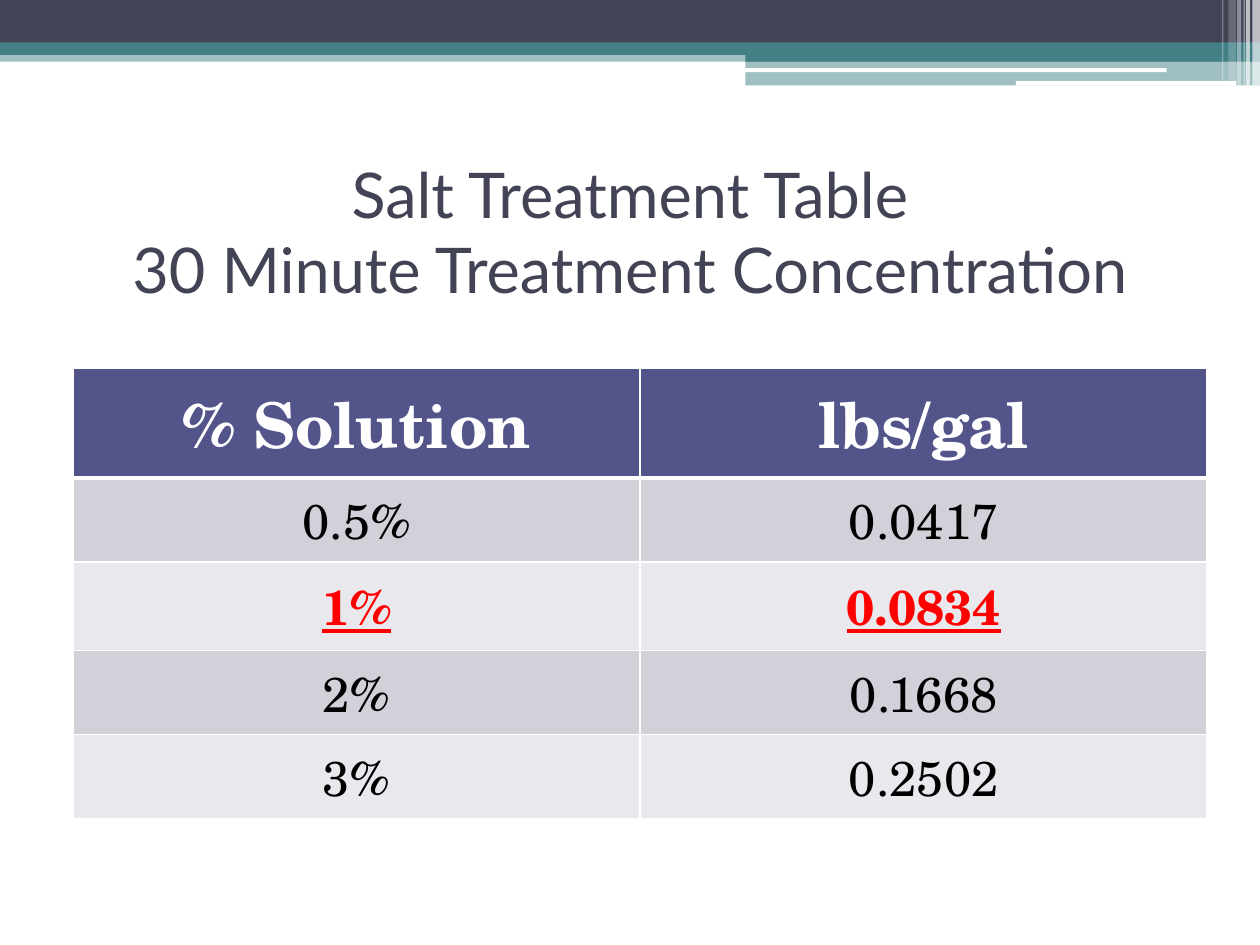
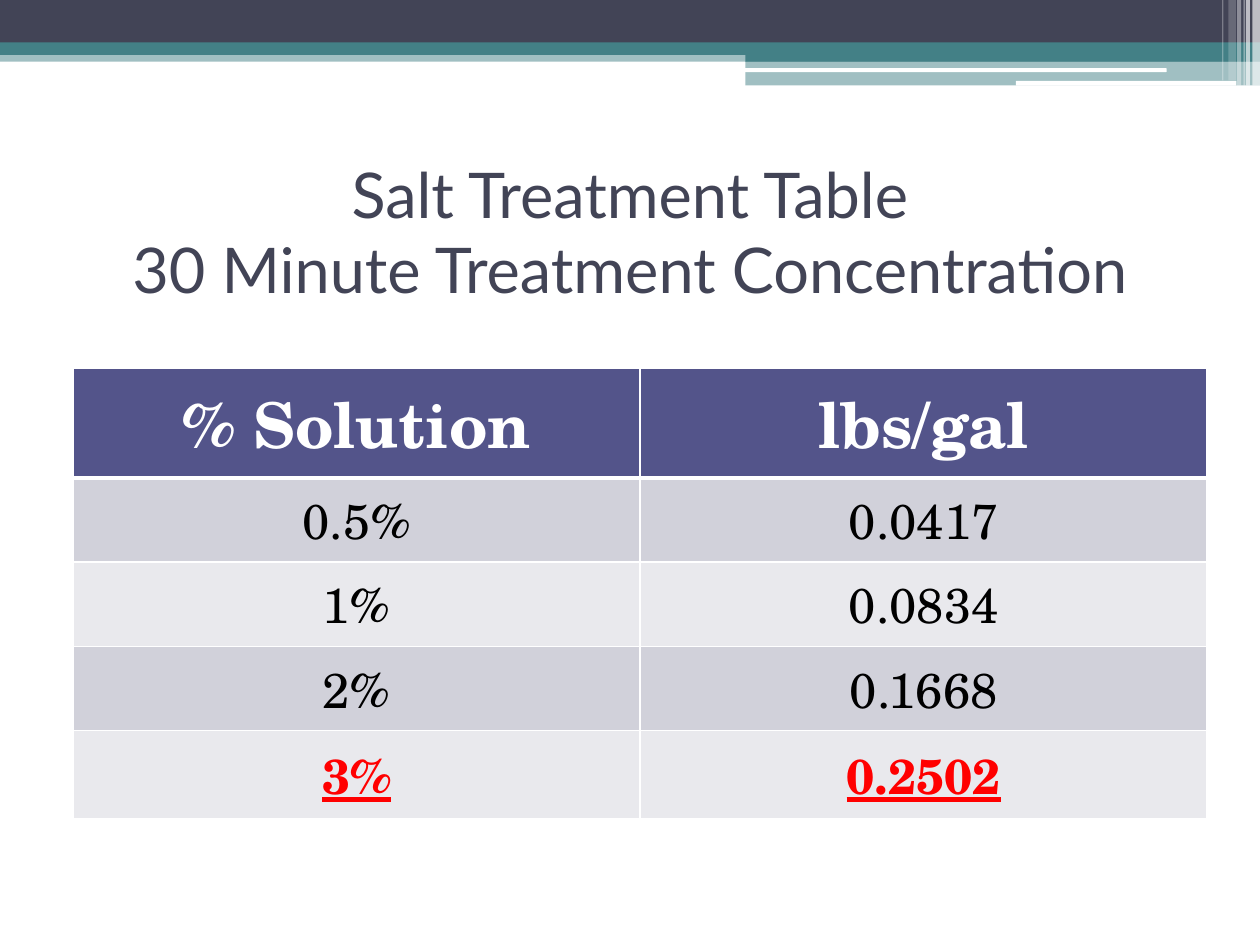
import pptx
import pptx.util
import pptx.dml.color
import pptx.enum.shapes
import pptx.enum.text
import pptx.oxml
import pptx.oxml.ns
import lxml.etree

Pt = pptx.util.Pt
SHAPES = pptx.enum.shapes.MSO_SHAPE
CENTER = pptx.enum.text.PP_ALIGN.CENTER
MIDDLE = pptx.enum.text.MSO_ANCHOR.MIDDLE

SLATE, TEAL, WHITE = "424456", "438086", "FFFFFF"
INDIGO, BAND_DARK, BAND_LIGHT = "53548A", "D1D1DA", "E9E9ED"
BLACK, RED = "000000", "FF0000"

TITLE_FORMAT = {"name": "Lato", "size": Pt(36), "bold": False}
HEADER_FORMAT = {"name": "TeX Gyre Schola", "size": Pt(36), "bold": True}
DOSE_FORMAT = {"name": "TeX Gyre Schola", "size": Pt(28), "bold": False}
MARKED_FORMAT = DOSE_FORMAT | {"bold": True, "underline": True}

TITLE = "Salt Treatment Table\v30 Minute Treatment Concentration"
DOSES = [
    ("% Solution", "lbs/gal"),
    ("0.5%", "0.0417"),
    ("1%", "0.0834"),
    ("2%", "0.1668"),
    ("3%", "0.2502"),
]
MARKED_DOSES = ["1%", "3%"]

BANNER_BOX = (0, 0, 720, 49)
TITLE_BOX = (36, 90, 648, 84)
TABLE_BOX = (41.8, 210.2, 648, 214)

BANDS = [
    (0, 28.8, 720, 6.5, TEAL, 50),
    (0, 0, 720, 24.5, SLATE, 100),
    (0, 24.2, 720, 7.2, TEAL, 100),
    (426, 28.1, 294, 7.2, TEAL, 100),
    (426, 35, 294, 13.9, TEAL, 50),
]
HIGHLIGHTS = [(425.5, 39, 241.2, 2.2), (580.5, 46.2, 126, 2.7)]
STRIPES = [
    (715.7, 4.3, 49, 65),
    (712, 2.2, 49, 65),
    (710.6, 0.72, 49, 60),
    (707, 2.2, 49, 40),
    (702, 4.3, 46, 20),
    (698.4, 0.72, 46, 30),
]


def color(value):
    return pptx.dml.color.RGBColor.from_string(value)


def format_font(font, values, ink):
    for attribute, value in values.items():
        setattr(font, attribute, value)
    font.color.rgb = color(ink)


def add_bar(slide, kind, left, top, width, height, fill, opacity=100):
    bar = slide.shapes.add_shape(kind, Pt(left), Pt(top), Pt(width), Pt(height))
    bar.shadow.inherit = False
    bar.fill.solid()
    bar.fill.fore_color.rgb = color(fill)
    bar.line.fill.background()
    if opacity < 100:
        tint = bar.fill._xPr.find(".//" + pptx.oxml.ns.qn("a:srgbClr"))
        alpha = lxml.etree.SubElement(tint, pptx.oxml.ns.qn("a:alpha"))
        alpha.set("val", str(opacity * 1000))


def add_banner(slide, box):
    x, y, _, _ = box
    for left, top, width, height, fill, opacity in BANDS:
        add_bar(slide, SHAPES.RECTANGLE, x + left, y + top, width, height, fill, opacity)
    for left, top, width, height in HIGHLIGHTS:
        add_bar(slide, SHAPES.ROUNDED_RECTANGLE, x + left, y + top, width, height, WHITE)
    for left, width, height, opacity in STRIPES:
        add_bar(slide, SHAPES.RECTANGLE, x + left, y, width, height, WHITE, opacity)


def fill_title(slide, box):
    title = slide.shapes.title
    title.left, title.top, title.width, title.height = map(Pt, box)
    frame = title.text_frame
    frame.text = TITLE
    frame.word_wrap = True
    frame.auto_size = pptx.enum.text.MSO_AUTO_SIZE.NONE
    frame.vertical_anchor = MIDDLE
    heading = frame.paragraphs[0]
    heading.alignment = CENTER
    for run in heading.runs:
        format_font(run.font, TITLE_FORMAT, SLATE)


def set_borders(cell, widths):
    properties = cell._tc.get_or_add_tcPr()
    for position, (side, width) in enumerate(widths.items()):
        border = pptx.oxml.parse_xml(
            f'<a:ln{side} {pptx.oxml.ns.nsdecls("a")} w="{Pt(width)}"><a:solidFill>'
            f'<a:srgbClr val="{WHITE}"/></a:solidFill></a:ln{side}>'
        )
        properties.insert(position, border)


def dose_style(row, marked):
    if row == 0:
        return INDIGO, HEADER_FORMAT, WHITE
    band = BAND_DARK if row % 2 else BAND_LIGHT
    if DOSES[row][0] == marked:
        return band, MARKED_FORMAT, RED
    return band, DOSE_FORMAT, BLACK


def add_dose_table(slide, box, marked):
    table = slide.shapes.add_table(len(DOSES), len(DOSES[0]), *map(Pt, box)).table
    for row, dose in enumerate(DOSES):
        band, values, ink = dose_style(row, marked)
        borders = {"L": 1, "R": 1, "T": 3 if row == 1 else 1, "B": 3 if row == 0 else 1}
        for column, text in enumerate(dose):
            cell = table.cell(row, column)
            cell.text = text
            cell.fill.solid()
            cell.fill.fore_color.rgb = color(band)
            set_borders(cell, borders)
            entry = cell.text_frame.paragraphs[0]
            entry.alignment = CENTER
            format_font(entry.runs[0].font, values, ink)


def add_dose_slide(deck, marked):
    slide = deck.slides.add_slide(deck.slide_layouts.get_by_name("Title Only"))
    add_banner(slide, BANNER_BOX)
    fill_title(slide, TITLE_BOX)
    add_dose_table(slide, TABLE_BOX, marked)


def main():
    deck = pptx.Presentation()
    deck.slide_width, deck.slide_height = Pt(720), Pt(540)
    for marked in MARKED_DOSES:
        add_dose_slide(deck, marked)
    deck.save("out.pptx")


if __name__ == "__main__":
    main()
